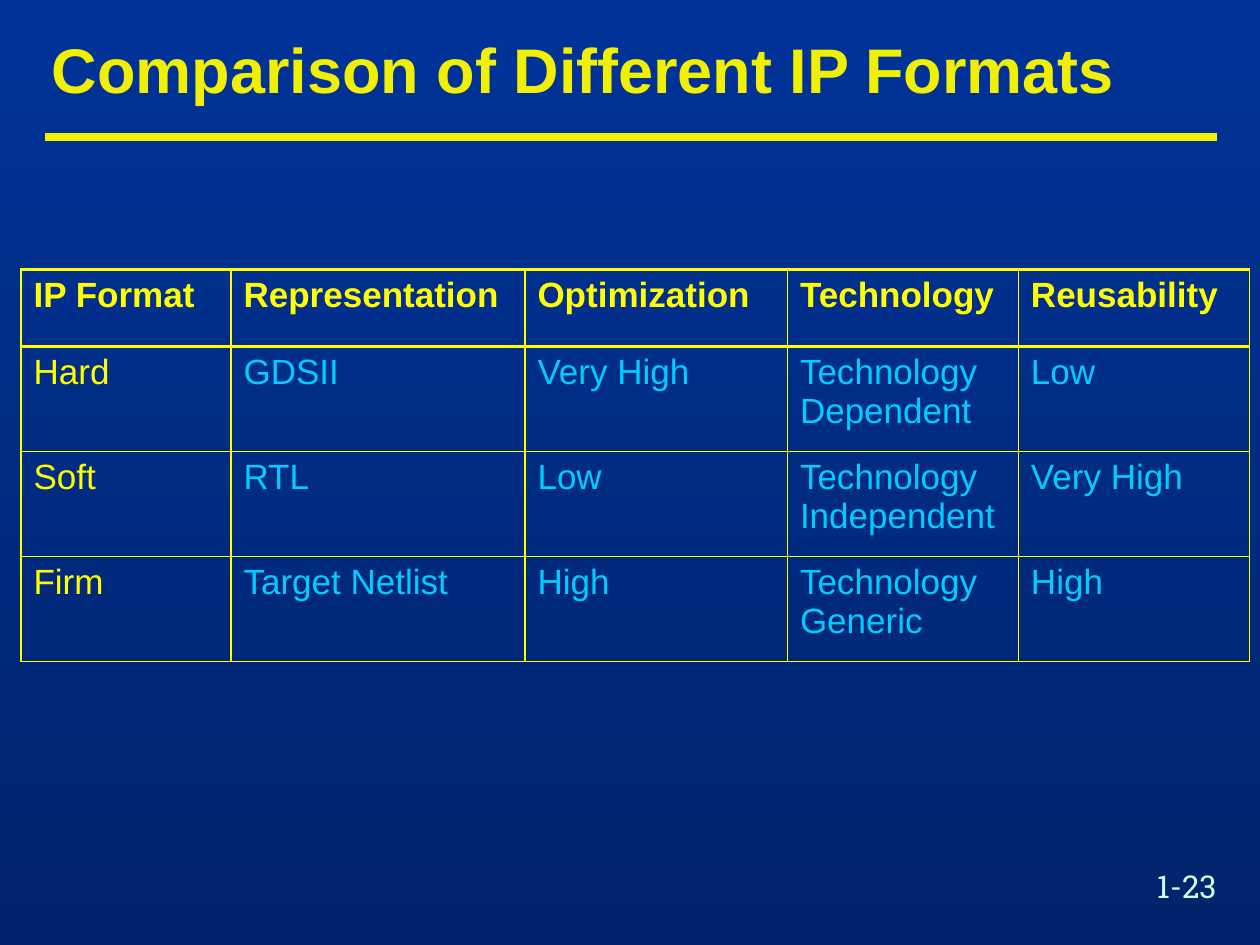
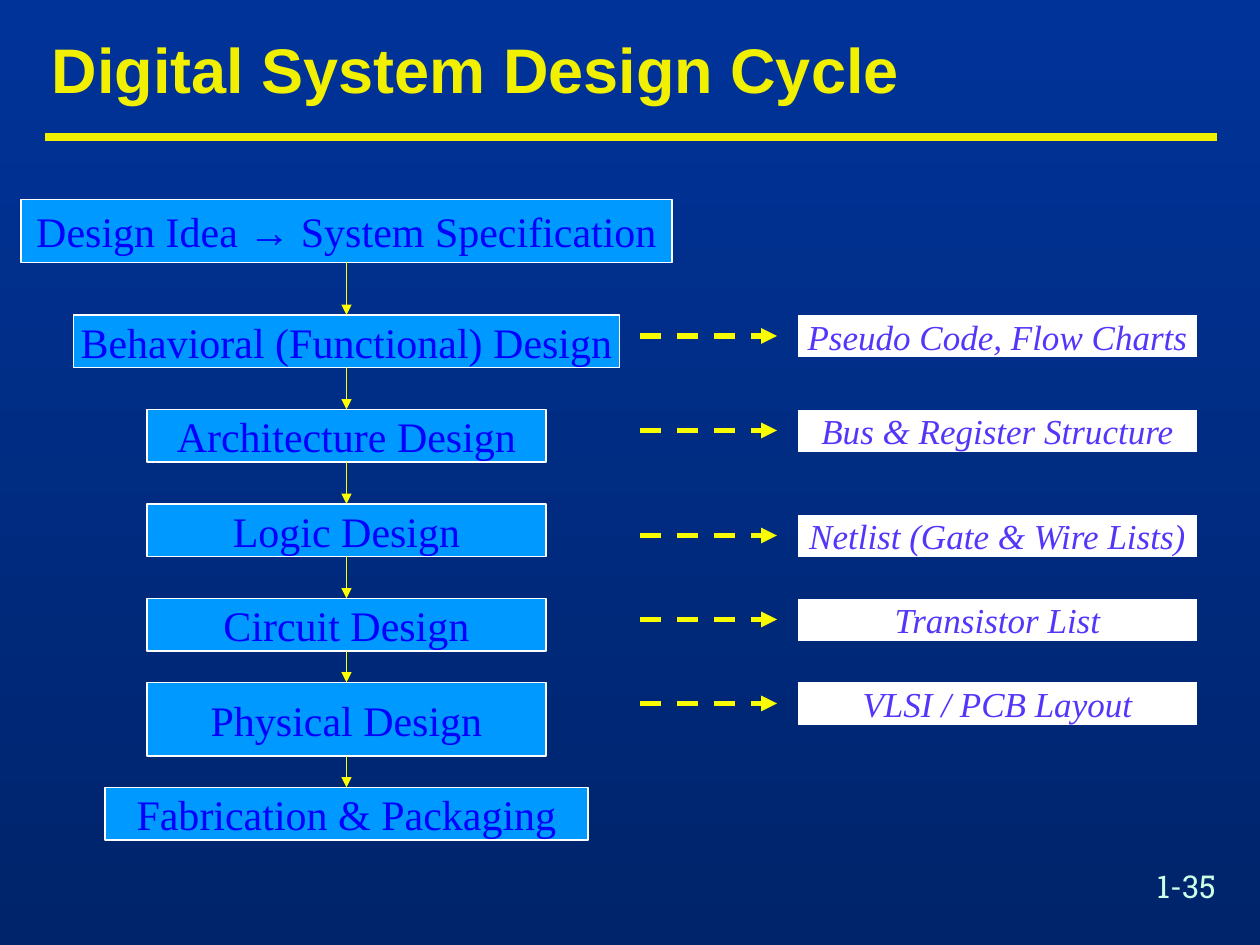
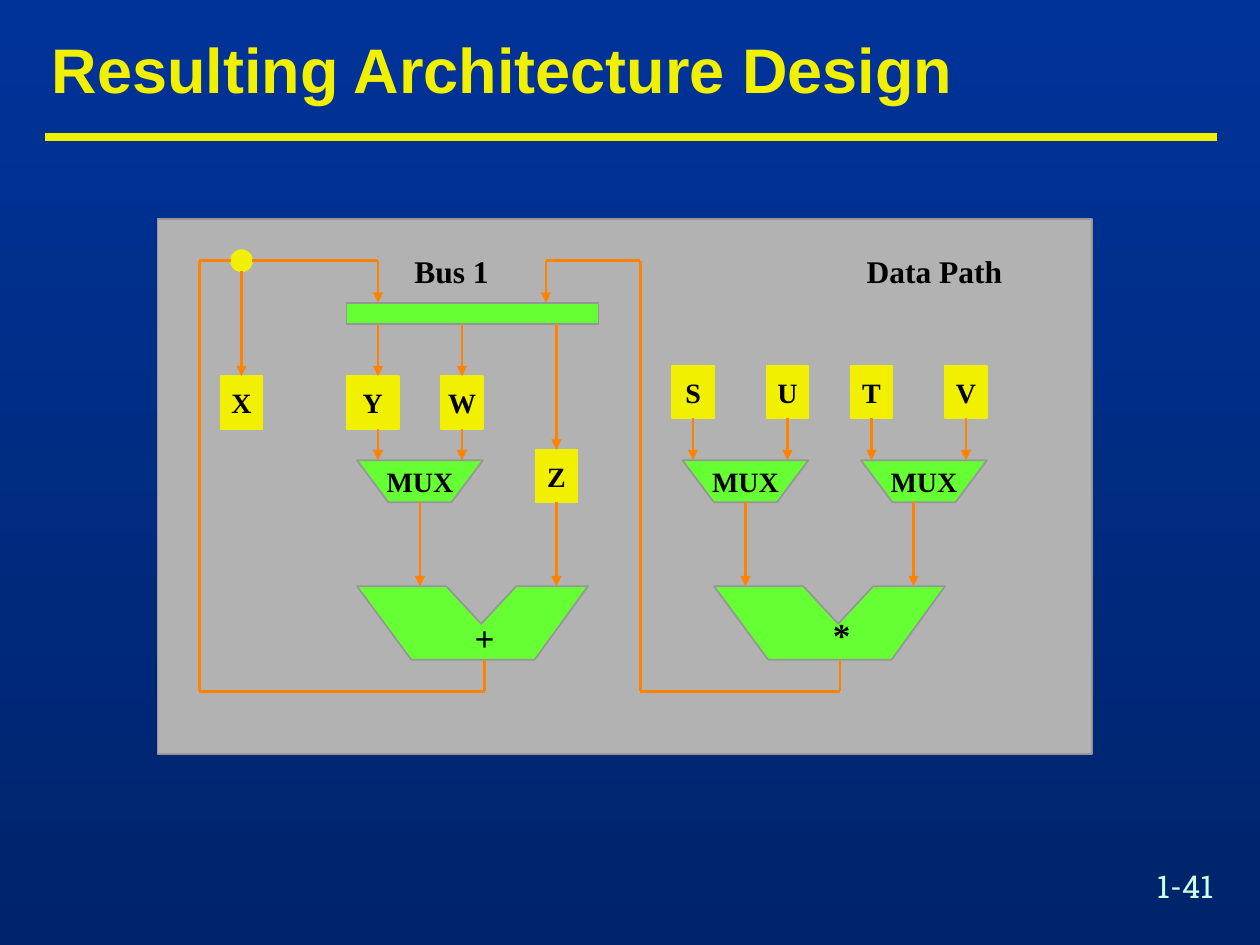
from dataclasses import dataclass
from itertools import pairwise

from lxml.etree import SubElement
from pptx import Presentation
from pptx.dml.color import RGBColor
from pptx.enum.dml import MSO_LINE
from pptx.enum.shapes import MSO_CONNECTOR, MSO_SHAPE
from pptx.enum.text import MSO_ANCHOR, PP_ALIGN
from pptx.oxml.ns import qn
from pptx.util import Pt


@dataclass(frozen=True)
class Theme:
    sky: str = "003399"
    deep: str = "00246B"
    gold: str = "F0F000"
    yellow: str = "FFFF00"
    lemon: str = "FAFD00"
    cyan: str = "00CCFF"
    mint: str = "CDFFE6"
    white: str = "FFFFFF"
    black: str = "000000"
    step_fill: str = "0099FF"
    step_text: str = "0000FF"
    result_text: str = "5236FA"
    panel: str = "B2B2B2"
    edge: str = "969696"
    green: str = "66FF33"
    wire: str = "FF8200"
    sans: str = "Arial"
    serif: str = "Times New Roman"
    slab: str = "Roboto Slab"
    title_size: int = 36
    step_size: int = 24
    body_size: int = 20
    label_size: int = 18
    part_size: int = 16


@dataclass(frozen=True)
class Style:
    font: str
    size: int
    color: str
    bold: bool = False
    italic: bool = False


THEME = Theme()
TITLE = Style(THEME.sans, THEME.title_size, THEME.gold, bold=True)
NUMBER = Style(THEME.slab, THEME.label_size, THEME.mint)
HEAD_CELL = Style(THEME.sans, THEME.body_size, THEME.yellow, bold=True)
FORMAT_CELL = Style(THEME.sans, THEME.body_size, THEME.yellow)
VALUE_CELL = Style(THEME.sans, THEME.body_size, THEME.cyan)
STEP = Style(THEME.serif, THEME.step_size, THEME.step_text)
RESULT = Style(THEME.serif, THEME.body_size, THEME.result_text, italic=True)
PART = Style(THEME.serif, THEME.part_size, THEME.black, bold=True)
OPERATOR = Style(THEME.serif, THEME.body_size, THEME.black, bold=True)
LABEL = Style(THEME.serif, THEME.label_size, THEME.black, bold=True)


def rgb(color):
    return RGBColor.from_string(color)


class Deck:
    """Holds the presentation and the slide being drawn; lengths are in points."""

    def __init__(self):
        self.prs = Presentation()
        self.prs.slide_width, self.prs.slide_height = Pt(720), Pt(540)
        self.slide = None
        backdrop = self.prs.slide_master.background.fill
        backdrop.gradient()
        backdrop.gradient_angle = 270
        for stop, color in zip(backdrop.gradient_stops, (THEME.sky, THEME.deep)):
            stop.color.rgb = rgb(color)

    def add_slide(self, heading, number):
        self.slide = self.prs.slides.add_slide(self.prs.slide_layouts[5])
        title = self.slide.shapes.title
        title.left, title.top, title.width, title.height = map(Pt, (22.5, 16.5, 676, 50.5))
        title.text_frame.vertical_anchor = MSO_ANCHOR.MIDDLE
        run = self.put_text(title.text_frame, heading, TITLE)
        title.text_frame.paragraphs[0].line_spacing = 0.9
        self.cast_shadow(run)
        self.line((26, 78.5), (695.5, 78.5), THEME.gold, 4.5)
        self.label(number, (654, 492, 66, 29), NUMBER, PP_ALIGN.LEFT)

    @staticmethod
    def cast_shadow(run):
        properties = run.font._element
        effects = properties.makeelement(qn("a:effectLst"))
        properties.find(qn("a:solidFill")).addnext(effects)
        shadow = SubElement(effects, qn("a:outerShdw"), dist="35921", dir="2700000")
        SubElement(shadow, qn("a:srgbClr"), val=THEME.black)

    @staticmethod
    def put_text(frame, text, style, align=PP_ALIGN.LEFT):
        paragraph = frame.paragraphs[0]
        paragraph.alignment = align
        run = paragraph.add_run()
        run.text = text
        font = run.font
        font.name, font.size = style.font, Pt(style.size)
        font.bold, font.italic = style.bold, style.italic
        font.color.rgb = rgb(style.color)
        return run

    def finish(self, shape, fill, edge, width, text, style):
        """Give a shape its fill, outline and centred text."""
        shape.shadow.inherit = False
        shape.fill.solid()
        shape.fill.fore_color.rgb = rgb(fill)
        if edge:
            shape.line.color.rgb = rgb(edge)
            shape.line.width = Pt(width)
        else:
            shape.line.fill.background()
        if text:
            frame = shape.text_frame
            frame.word_wrap = False
            frame.vertical_anchor = MSO_ANCHOR.MIDDLE
            self.put_text(frame, text, style, PP_ALIGN.CENTER)

    def box(self, preset, place, fill, edge=None, width=1, text="", style=PART):
        shape = self.slide.shapes.add_shape(preset, *map(Pt, place))
        self.finish(shape, fill, edge, width, text, style)

    def polygon(self, left, top, outline, text=""):
        start, *rest = [(Pt(left + x), Pt(top + y)) for x, y in outline]
        builder = self.slide.shapes.build_freeform(*start)
        builder.add_line_segments(rest, close=True)
        self.finish(builder.convert_to_shape(), THEME.green, THEME.edge, 1, text, PART)

    def label(self, text, place, style, align=PP_ALIGN.CENTER, wrap=True, sunk=False):
        """Add a text box; a sunk one rests its text on the bottom edge."""
        frame = self.slide.shapes.add_textbox(*map(Pt, place)).text_frame
        frame.word_wrap = wrap
        if sunk:
            frame.vertical_anchor = MSO_ANCHOR.BOTTOM
            frame.margin_bottom = 0
        self.put_text(frame, text, style, align)

    def line(self, start, end, color, width, arrow=False, dashed=False):
        connector = self.slide.shapes.add_connector(
            MSO_CONNECTOR.STRAIGHT, *map(Pt, (*start, *end)))
        connector.line.color.rgb = rgb(color)
        connector.line.width = Pt(width)
        if dashed:
            connector.line.dash_style = MSO_LINE.DASH
        properties = connector._element.spPr
        if arrow:
            SubElement(properties.find(qn("a:ln")), qn("a:tailEnd"), type="triangle")
        SubElement(properties, qn("a:effectLst"))

    def wire(self, *corners, arrow=True):
        """Join corners by straight lines, with an arrowhead at the last."""
        for start, end in pairwise(corners):
            self.line(start, end, THEME.wire, 1.5, arrow and end == corners[-1])

    def table(self, left, top, widths, heights, rows):
        table = self.slide.shapes.add_table(
            len(heights), len(widths),
            *map(Pt, (left, top, sum(widths), sum(heights)))).table
        table.first_row = table.horz_banding = False
        for column, width in zip(table.columns, widths):
            column.width = Pt(width)
        for r, (height, texts) in enumerate(zip(heights, rows)):
            table.rows[r].height = Pt(height)
            for c, text in enumerate(texts):
                style = HEAD_CELL if r == 0 else VALUE_CELL if c else FORMAT_CELL
                cell = table.cell(r, c)
                self.put_text(cell.text_frame, text, style)
                self.frame_cell(cell, 2.25 if r < 2 else 1, 2.25 if r == 0 else 1)

    @staticmethod
    def frame_cell(cell, top, bottom):
        properties = cell._tc.get_or_add_tcPr()
        for side, width in zip("LRTB", (1, 1, top, bottom)):
            border = SubElement(properties, qn(f"a:ln{side}"), w=str(Pt(width)))
            fill = SubElement(border, qn("a:solidFill"))
            SubElement(fill, qn("a:srgbClr"), val=THEME.yellow)
        cell.fill.background()


def ip_formats(deck):
    deck.add_slide("Comparison of Different IP Formats", "1-23")
    deck.table(12, 154, (120, 168, 150, 132, 132), (44, 60, 60, 60), (
        ("IP Format", "Representation", "Optimization", "Technology", "Reusability"),
        ("Hard", "GDSII", "Very High", "Technology Dependent", "Low"),
        ("Soft", "RTL", "Low", "Technology Independent", "Very High"),
        ("Firm", "Target Netlist", "High", "Technology Generic", "High"),
    ))


def design_cycle(deck):
    deck.add_slide("Digital System Design Cycle", "1-35")
    axis = 198
    steps = (
        ("Design Idea → System Specification", 114, 372, 36),
        ("Behavioral (Functional) Design", 180, 312, 30),
        ("Architecture Design", 234, 228, 30),
        ("Logic Design", 288, 228, 30),
        ("Circuit Design", 342, 228, 30),
        ("Physical Design", 390, 228, 42),
        ("Fabrication & Packaging", 450, 276, 30),
    )
    for text, top, width, height in steps:
        deck.box(MSO_SHAPE.FLOWCHART_PROCESS, (axis - width / 2, top, width, height),
                 THEME.step_fill, THEME.white, 0.75, text, STEP)
    for (_, top, _, height), (_, next_top, _, _) in pairwise(steps):
        deck.line((axis, top + height), (axis, next_top), THEME.yellow, 0.75, arrow=True)

    results = (
        ("Pseudo Code, Flow Charts", 180),
        ("Bus & Register Structure", 234),
        ("Netlist (Gate & Wire Lists)", 294),
        ("Transistor List", 342),
        ("VLSI / PCB Layout", 390),
    )
    for text, top in results:
        deck.box(MSO_SHAPE.FLOWCHART_PROCESS, (456, top, 228, 24), THEME.white,
                 text=text, style=RESULT)
        deck.line((366, top + 12), (444, top + 12), THEME.lemon, 3, arrow=True, dashed=True)


def architecture(deck):
    deck.add_slide("Resulting Architecture Design", "1-41")
    loop_top, bus_top, bus_bottom = 149, 173, 185
    mux_top, mux_bottom, unit_top, unit_bottom, loop_bottom = 263, 287, 335, 377, 395

    deck.box(MSO_SHAPE.RECTANGLE, (90, 125, 534, 306), THEME.panel, THEME.edge)
    deck.box(MSO_SHAPE.RECTANGLE, (198, bus_top, 144, bus_bottom - bus_top),
             THEME.green, THEME.edge)
    deck.box(MSO_SHAPE.OVAL, (132, 143, 12, 12), THEME.gold, THEME.gold)

    registers = (
        ("X", 126, 215, 24), ("Y", 198, 215, 30), ("W", 252, 215, 24), ("Z", 306, 257, 24),
        ("S", 384, 209, 24), ("U", 438, 209, 24), ("T", 486, 209, 24), ("V", 540, 209, 24),
    )
    for name, left, top, width in registers:
        deck.box(MSO_SHAPE.RECTANGLE, (left, top, width, 30), THEME.gold, THEME.gold,
                 text=name)

    for left in (204, 390, 492):
        deck.polygon(left, mux_top, ((0, 0), (18, 24), (54, 24), (72, 0)), "MUX")
    unit = ((0, 0), (51, 0), (71, 21.5), (91, 0), (132, 0), (101.5, 42), (31, 42))
    for left in (204, 408):
        deck.polygon(left, unit_top, unit)
    deck.label("+", (264, 349, 26, 27.5), OPERATOR, sunk=True)
    deck.label("*", (468, 347, 26, 27.5), OPERATOR, sunk=True)

    drops = (
        (138, 155, 215), (216, bus_bottom, 215), (264, bus_bottom, 215),
        (318, bus_bottom, 257), (216, 245, mux_top), (264, 245, mux_top),
        (396, 239, mux_top), (450, 239, mux_top), (498, 239, mux_top), (552, 239, mux_top),
        (240, mux_bottom, unit_top), (318, mux_bottom, unit_top),
        (426, mux_bottom, unit_top), (522, mux_bottom, unit_top),
    )
    for x, top, bottom in drops:
        deck.wire((x, top), (x, bottom))
    deck.wire((277, unit_bottom), (277, loop_bottom), (114, loop_bottom),
              (114, loop_top), (132, loop_top), arrow=False)
    deck.wire((144, loop_top), (216, loop_top), (216, bus_top))
    deck.wire((480, unit_bottom), (480, loop_bottom), (366, loop_bottom),
              (366, loop_top), (312, loop_top), (312, bus_top))

    deck.label("Bus 1", (229.5, 140.5, 57, 29), LABEL, wrap=False)
    deck.label("Data Path", (488, 140.5, 92, 29), LABEL, wrap=False)


def main():
    deck = Deck()
    ip_formats(deck)
    design_cycle(deck)
    architecture(deck)
    deck.prs.save("out.pptx")


if __name__ == "__main__":
    main()
